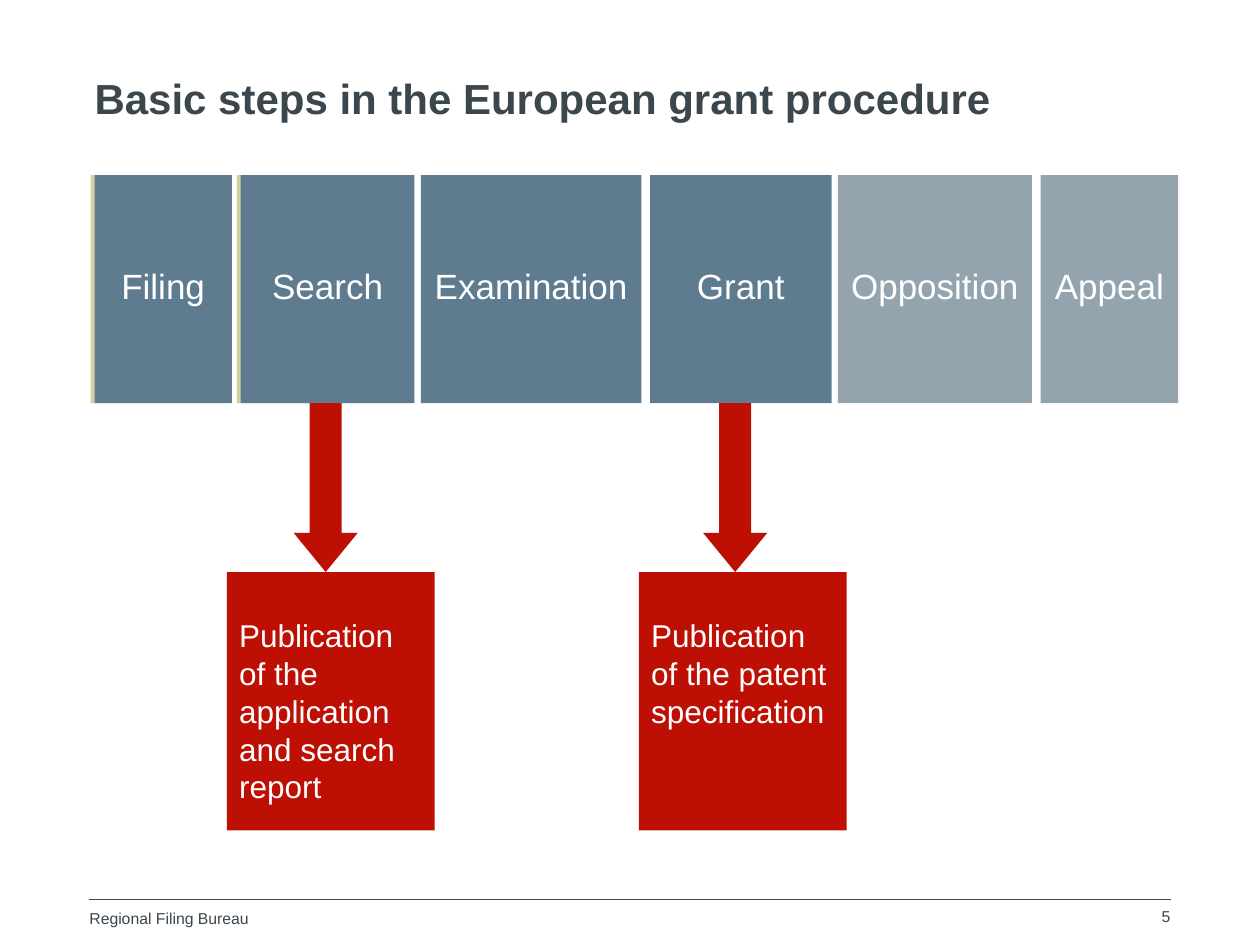
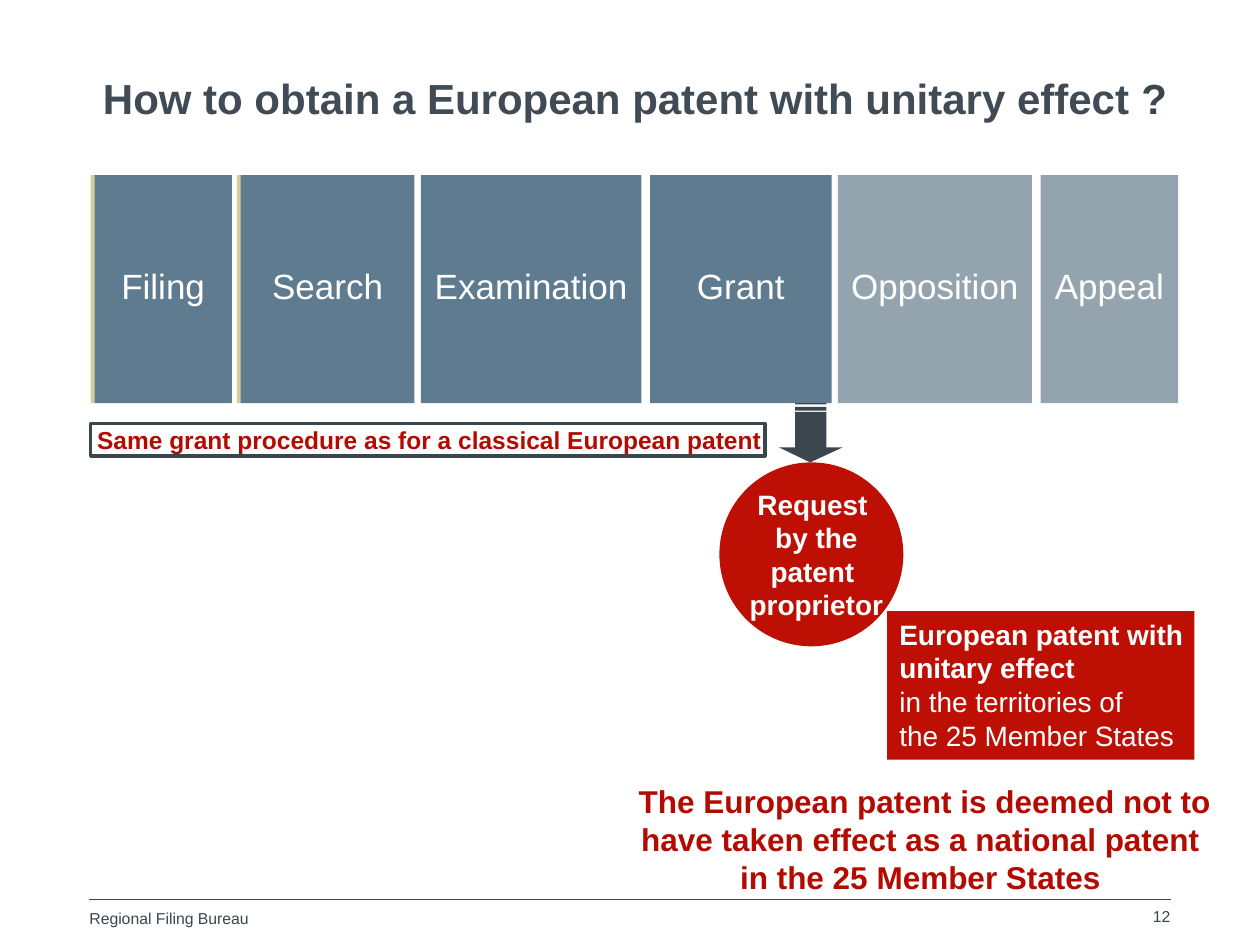
from dataclasses import dataclass
from typing import Optional

from lxml import etree
from pptx import Presentation
from pptx import util as u
from pptx.dml.color import RGBColor
from pptx.enum import shapes, text
from pptx.oxml.ns import qn

PX = 9144  # one px is a hundredth of an inch
FONT = "Arial"
OFFICE = "Regional Filing Bureau"

SLATE = RGBColor(0x3B, 0x46, 0x4D)
TITLE_GREY = RGBColor(0x40, 0x4B, 0x56)
BLUE = RGBColor(0x5F, 0x7B, 0x8F)
PALE_BLUE = RGBColor(0x94, 0xA4, 0xAE)
SAGE = RGBColor(0xD0, 0xD1, 0x9F)
RED = RGBColor(0xBE, 0x0F, 0x05)
DARK_RED = RGBColor(0xB3, 0x0B, 0x00)
WHITE = RGBColor(0xFF, 0xFF, 0xFF)

LEFT, CENTER, RIGHT = text.PP_ALIGN.LEFT, text.PP_ALIGN.CENTER, text.PP_ALIGN.RIGHT
TOP, MIDDLE = text.MSO_ANCHOR.TOP, text.MSO_ANCHOR.MIDDLE
RECT, OVAL = shapes.MSO_SHAPE.RECTANGLE, shapes.MSO_SHAPE.OVAL


@dataclass(frozen=True)
class Box:
    left: int
    top: int
    width: int
    height: int

    def emu(self) -> tuple[int, ...]:
        return tuple(v * PX for v in (self.left, self.top, self.width, self.height))


@dataclass(frozen=True)
class Style:
    size: int
    color: RGBColor = WHITE
    align: text.PP_ALIGN = LEFT
    anchor: text.MSO_ANCHOR = TOP
    insets: tuple[int, int, int, int] = (10, 5, 10, 5)
    bold_lines: int = 0
    wrap: bool = False


@dataclass(frozen=True)
class Step:
    name: str
    left: int
    width: int
    fill: RGBColor = BLUE
    sage_edge: bool = False


@dataclass(frozen=True)
class Publication:
    arrow_left: int
    box_left: int
    lines: tuple[str, ...]


STEP_TOP, STEP_HEIGHT, EDGE = 139, 181, 3
STEPS = (
    Step("Filing", 75, 109, sage_edge=True),
    Step("Search", 191, 138, sage_edge=True),
    Step("Examination", 334, 175),
    Step("Grant", 516, 144),
    Step("Opposition", 665, 154, PALE_BLUE),
    Step("Appeal", 826, 109, PALE_BLUE),
)
PUBLICATIONS = (
    Publication(233, 180, ("Publication", "of the", "application", "and search \vreport")),
    Publication(558, 507, ("Publication", "of the patent", "specification")),
)

STEP_STYLE = Style(20, align=CENTER, insets=(10, 71, 10, 5))
PUBLICATION_STYLE = Style(18, insets=(10, 35, 10, 5))
FOOTER_STYLE = Style(9, SLATE, insets=(0, 0, 0, 0), wrap=True)
NUMBER_STYLE = Style(9, SLATE, RIGHT, insets=(0, 0, 0, 0), wrap=True)


# Drawing helpers
def set_frame(tf, insets: tuple[int, int, int, int], anchor, wrap: bool) -> None:
    tf.auto_size = text.MSO_AUTO_SIZE.NONE
    tf.word_wrap = wrap
    tf.vertical_anchor = anchor
    tf.margin_left, tf.margin_top, tf.margin_right, tf.margin_bottom = (
        v * PX for v in insets)


def set_font(r, size: int, color: RGBColor, bold: bool) -> None:
    r.font.name = FONT
    r.font.size = u.Pt(size)
    r.font.bold = bold
    r.font.color.rgb = color


def write(sp, lines: tuple[str, ...], style: Style) -> None:
    tf = sp.text_frame
    set_frame(tf, style.insets, style.anchor, style.wrap)
    for i, line in enumerate(lines):
        p = tf.add_paragraph() if i else tf.paragraphs[0]
        p.text = line
        p.alignment = style.align
        for r in p.runs:
            set_font(r, style.size, style.color, i < style.bold_lines)


def paint(sp, fill: Optional[RGBColor]) -> None:
    sp.shadow.inherit = False
    sp.line.fill.background()
    if fill is None:
        sp.fill.background()
    else:
        sp.fill.solid()
        sp.fill.fore_color.rgb = fill


def add_block(s, box: Box, fill: Optional[RGBColor], kind=RECT):
    sp = s.shapes.add_shape(kind, *box.emu())
    paint(sp, fill)
    return sp


def add_label(s, box: Box, lines: tuple[str, ...], style: Style) -> None:
    write(s.shapes.add_textbox(*box.emu()), lines, style)


# Parts shared by both slides
def add_title(s, parts: tuple[tuple[str, RGBColor], ...], align) -> None:
    sp = s.shapes.title
    sp.left, sp.top, sp.width, sp.height = Box(75, 59, 858, 59).emu()
    set_frame(sp.text_frame, (0, 0, 0, 0), TOP, True)
    p = sp.text_frame.paragraphs[0]
    p.alignment = align
    p.line_spacing = u.Pt(28)
    for words, color in parts:
        r = p.add_run()
        r.text = words
        set_font(r, 24, color, True)


def add_footer(s, number: int) -> None:
    rule = s.shapes.add_connector(
        shapes.MSO_CONNECTOR.STRAIGHT, 71 * PX, 714 * PX, 929 * PX, 714 * PX)
    rule.line.color.rgb = SLATE
    rule.line.width = u.Pt(0.75)
    etree.SubElement(rule._element.spPr, qn("a:effectLst"))
    add_label(s, Box(71, 721, 170, 25), (OFFICE,), FOOTER_STYLE)
    add_label(s, Box(732, 720, 197, 24), (str(number),), NUMBER_STYLE)


def add_steps(s) -> None:
    for step in STEPS:
        box = Box(step.left, STEP_TOP, step.width, STEP_HEIGHT)
        if step.sage_edge:
            add_block(s, Box(box.left - EDGE, box.top, box.width, box.height), SAGE)
        write(add_block(s, box, step.fill), (step.name,), STEP_STYLE)


def new_slide(prs, parts: tuple[tuple[str, RGBColor], ...], align, number: int):
    s = prs.slides.add_slide(prs.slide_layouts[5])
    add_title(s, parts, align)
    add_footer(s, number)
    add_steps(s)
    return s


# Slide contents
def add_grant_procedure(prs) -> None:
    s = new_slide(prs, (("Basic steps in the European grant procedure", SLATE),), LEFT, 5)
    for pub in PUBLICATIONS:
        arrow = add_block(s, Box(pub.arrow_left, 320, 51, 134), RED,
                          shapes.MSO_SHAPE.DOWN_ARROW)
        arrow.adjustments[0], arrow.adjustments[1] = 0.5, 0.61
        write(add_block(s, Box(pub.box_left, 454, 165, 205), RED),
              pub.lines, PUBLICATION_STYLE)


def add_striped_arrow(s) -> None:
    head = ((669, 355), (656, 355), (656, 327), (631, 327),
            (631, 355), (618, 355), (643, 367))
    stripes = [((656, top), (631, top), (631, bottom), (656, bottom))
               for top, bottom in ((323, 326), (320, 321))]
    builder = s.shapes.build_freeform(*head[0], scale=PX)
    builder.add_line_segments(head[1:], close=True)
    for stripe in stripes:
        builder.move_to(*stripe[0])
        builder.add_line_segments(stripe[1:], close=True)
    paint(builder.convert_to_shape(), SLATE)


def add_unitary_effect(prs) -> None:
    s = new_slide(prs, (("How to obtain a European patent with unitary effect ", TITLE_GREY),
                        ("?", SLATE)), CENTER, 12)

    # Result and the request that leads to it
    write(add_block(s, Box(704, 485, 244, 118), RED),
          ("European patent with", "unitary effect",
           "in the territories of", "the 25 Member States"),
          Style(16, bold_lines=2))
    write(add_block(s, Box(571, 367, 146, 146), RED, OVAL),
          ("Request ", "by the", "patent ", "proprietor"),
          Style(16, align=CENTER, anchor=MIDDLE, insets=(8, 0, 0, 0), bold_lines=4))

    # Remarks
    add_label(s, Box(484, 616, 500, 101),
              ("The European patent is deemed not to have taken effect as a national patent ",
               "in the 25 Member States "),
              Style(18, DARK_RED, CENTER, bold_lines=2, wrap=True))
    remark = add_block(s, Box(72, 336, 535, 26), None)
    remark.line.color.rgb = SLATE
    remark.line.width = u.Pt(2)
    write(remark, ("Same grant procedure as for a classical European patent",),
          Style(14, DARK_RED, anchor=MIDDLE, insets=(5, 0, 0, 0), bold_lines=1, wrap=True))
    add_striped_arrow(s)


def main() -> None:
    prs = Presentation()
    prs.slide_width, prs.slide_height = 1000 * PX, 750 * PX
    add_grant_procedure(prs)
    add_unitary_effect(prs)
    prs.save("out.pptx")


if __name__ == "__main__":
    main()
